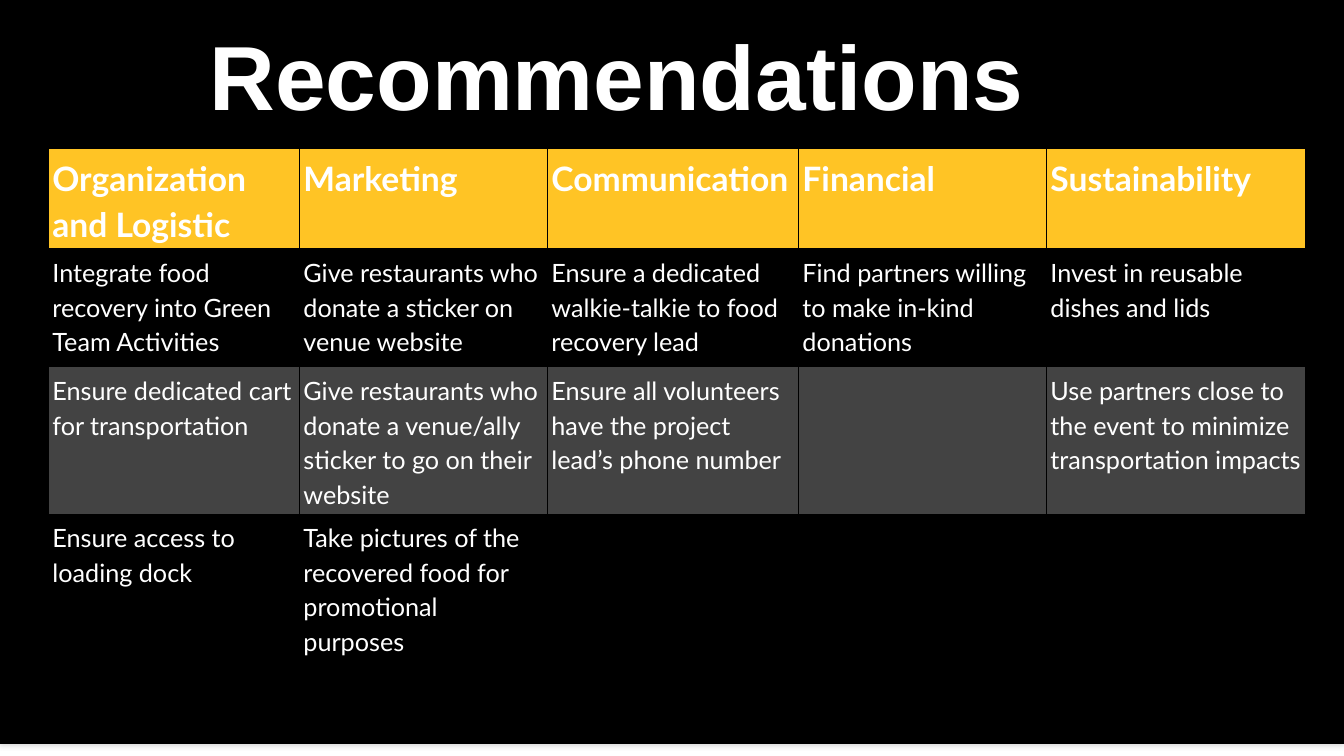
from lxml.etree import SubElement
from pptx import Presentation
from pptx.dml.color import RGBColor
from pptx.enum.shapes import MSO_SHAPE
from pptx.enum.text import MSO_ANCHOR
from pptx.oxml import parse_xml
from pptx.oxml.ns import nsdecls, qn
from pptx.util import Inches, Pt

BLACK = RGBColor(0x00, 0x00, 0x00)
WHITE = RGBColor(0xFF, 0xFF, 0xFF)
GOLD = RGBColor(0xFF, 0xC4, 0x25)
GREY = RGBColor(0x43, 0x43, 0x43)
ROW_FILLS = [GOLD, None, GREY, None]
COLUMN_WIDTHS = [2.49, 2.46, 2.49, 2.46, 2.57]
ROW_HEIGHTS = [0.7, 1.17, 1.17, 1.17]
RECOMMENDATIONS = [
    ["Organization and Logistic", "Marketing", "Communication", "Financial", "Sustainability"],
    [
        "Integrate food recovery into Green Team Activities",
        "Give restaurants who donate a sticker on venue website",
        "Ensure a dedicated walkie-talkie to food recovery lead",
        "Find partners willing to make in-kind donations",
        "Invest in reusable dishes and lids",
    ],
    [
        "Ensure dedicated cart for transportation",
        "Give restaurants who donate a venue/ally sticker to go on their website",
        "Ensure all volunteers have the project lead’s phone number",
        "",
        "Use partners close to the event to minimize transportation impacts",
    ],
    [
        "Ensure access to loading dock",
        "Take pictures of the recovered food for promotional purposes",
        "",
        "",
        "",
    ],
]


def style_paragraph(para, name, size, bold, spacing):
    """Set the white font and the line spacing of a paragraph."""
    para.font.name = name
    para.font.size = Pt(size)
    para.font.bold = bold
    para.font.color.rgb = WHITE
    para.line_spacing = spacing


def add_backdrop(page, left, top, width, height):
    """Draw the black panel with its soft shadow below."""
    panel = page.shapes.add_shape(
        MSO_SHAPE.RECTANGLE, Inches(left), Inches(top), Inches(width), Inches(height))
    panel.fill.solid()
    panel.fill.fore_color.rgb = BLACK
    panel.line.fill.background()
    panel._element.spPr.append(parse_xml(
        f'<a:effectLst {nsdecls("a")}>'
        f'<a:outerShdw blurRad="{Pt(3.1)}" dist="{Pt(1.8)}" dir="5400000" rotWithShape="0">'
        '<a:srgbClr val="808080"><a:alpha val="35000"/></a:srgbClr>'
        '</a:outerShdw></a:effectLst>'))


def add_title(page, left, top, width, height):
    """Write the slide title."""
    box = page.shapes.add_textbox(Inches(left), Inches(top), Inches(width), Inches(height))
    frame = box.text_frame
    frame.word_wrap = True
    frame.vertical_anchor = MSO_ANCHOR.MIDDLE
    frame.margin_bottom = Inches(0.15)
    frame.text = "Recommendations"
    style_paragraph(frame.paragraphs[0], "Arial", 65, True, 0.9)


def add_borders(cell):
    """Put thin black lines on the four sides of a cell."""
    properties = cell._tc.get_or_add_tcPr()
    for position, side in enumerate(("lnL", "lnR", "lnT", "lnB")):
        line = parse_xml(f'<a:{side} {nsdecls("a")} w="{Pt(0.75)}"/>')
        fill = SubElement(line, qn("a:solidFill"))
        SubElement(fill, qn("a:srgbClr"), val=str(BLACK))
        properties.insert(position, line)


def fill_cell(cell, text, color, is_header):
    """Write and style one table cell."""
    cell.margin_left = cell.margin_right = Inches(0.04)
    cell.margin_top = cell.margin_bottom = Inches(0.04)
    if color is None:
        cell.fill.background()
    else:
        cell.fill.solid()
        cell.fill.fore_color.rgb = color
    add_borders(cell)
    cell.text = text
    style_paragraph(
        cell.text_frame.paragraphs[0], "Lato", 24 if is_header else 18, is_header, 1.15)


def add_recommendation_table(page, left, top):
    """Build the table of recommendations by topic."""
    table = page.shapes.add_table(
        len(ROW_HEIGHTS), len(COLUMN_WIDTHS), Inches(left), Inches(top),
        Inches(sum(COLUMN_WIDTHS)), Inches(sum(ROW_HEIGHTS))).table
    table.horz_banding = False
    for column, width in zip(table.columns, COLUMN_WIDTHS):
        column.width = Inches(width)
    for index, row in enumerate(table.rows):
        row.height = Inches(ROW_HEIGHTS[index])
        for cell, text in zip(row.cells, RECOMMENDATIONS[index]):
            fill_cell(cell, text, ROW_FILLS[index], index == 0)


def main():
    """Build the slide and save the deck."""
    deck = Presentation()
    deck.slide_width = Inches(13.33)
    deck.slide_height = Inches(7.5)
    page = deck.slides.add_slide(deck.slide_layouts[6])
    add_backdrop(page, 0, -0.12, 13.33, 7.5)
    add_title(page, 1.98, 0.15, 9.38, 1.4)
    add_recommendation_table(page, 0.48, 1.47)
    deck.save("out.pptx")


if __name__ == "__main__":
    main()
